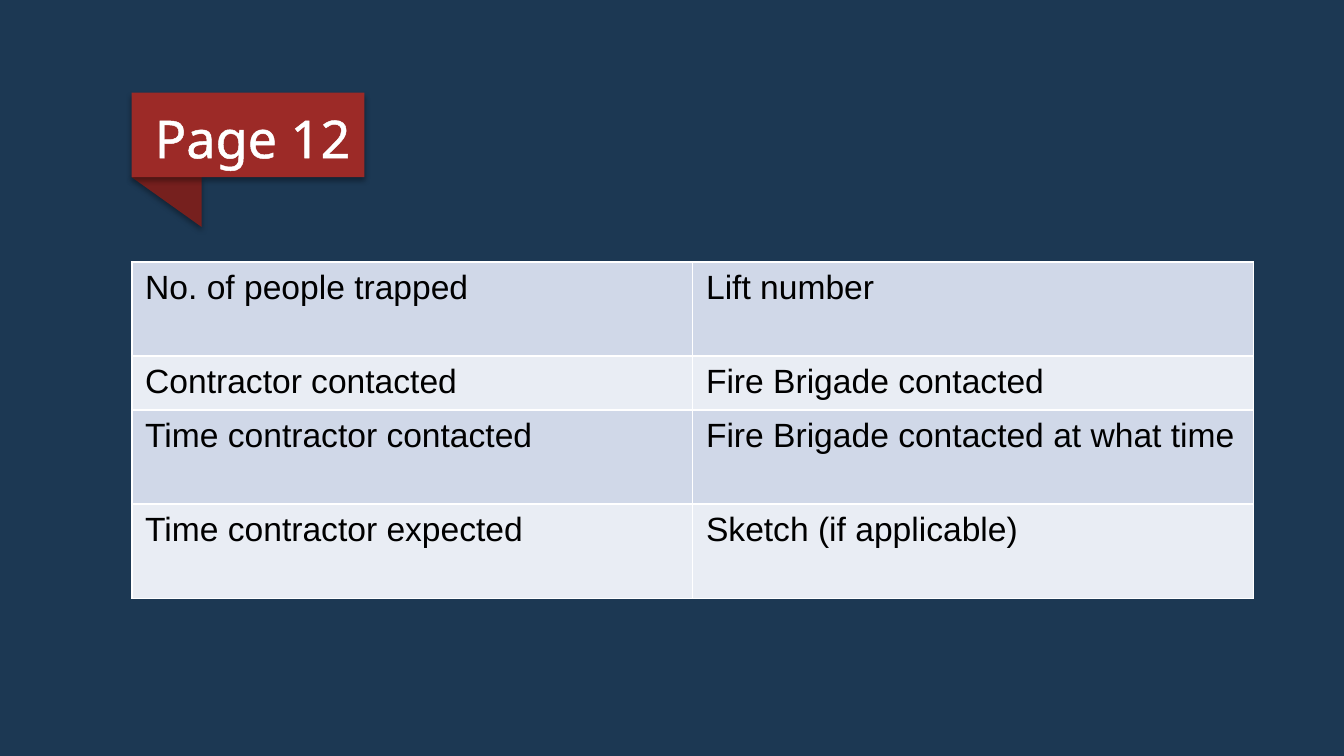
import pptx
import pptx.util
import pptx.dml.color
import pptx.enum.shapes
import pptx.enum.text
import pptx.oxml
from pptx.util import Cm, Pt
from pptx.enum.shapes import MSO_SHAPE

# Content
TITLE = "Page 12"
ROWS = [
    ("No. of people trapped", "Lift number"),
    ("Contractor contacted", "Fire Brigade contacted"),
    ("Time contractor contacted", "Fire Brigade contacted at what time"),
    ("Time contractor expected", "Sketch (if applicable)"),
]
ROW_HEIGHTS = [1.78, 1.02, 1.78, 1.78]
BANDS = ["D0D8E8", "E9EDF4"]
# Ribbon: shape, top, width, height, rotation, fill
RIBBON = [
    (MSO_SHAPE.RIGHT_TRIANGLE, 3.35, 1.32, 0.94, 180, "76201E"),
    (MSO_SHAPE.RECTANGLE, 1.75, 4.4, 1.6, 0, "9C2A27"),
]
LEFT, TABLE_TOP, TABLE_WIDTH = 2.49, 4.95, 21.2
NS = 'xmlns:a="http://schemas.openxmlformats.org/drawingml/2006/main"'


def paint(fill, color):
    fill.solid()
    fill.fore_color.rgb = pptx.dml.color.RGBColor.from_string(color)


def line_xml(tag):
    return pptx.oxml.parse_xml(
        f'<a:{tag} {NS} w="12700"><a:solidFill><a:srgbClr val="FFFFFF"/>'
        f'</a:solidFill></a:{tag}>')


def add_shadow(shape):
    shape._element.spPr.append(pptx.oxml.parse_xml(
        f'<a:effectLst {NS}><a:outerShdw blurRad="39370" dist="22860" dir="5400000" '
        'rotWithShape="0"><a:srgbClr val="000000"><a:alpha val="35000"/></a:srgbClr>'
        '</a:outerShdw></a:effectLst>'))


prs = pptx.Presentation()
prs.slide_width, prs.slide_height = Cm(25.4), Cm(14.29)
s = prs.slides.add_slide(prs.slide_layouts[5])
paint(s.background.fill, "1C3853")

# Ribbon behind the title
ribbon = s.shapes.add_group_shape()
for kind, top, width, height, rotation, color in RIBBON:
    sp = ribbon.shapes.add_shape(kind, Cm(LEFT), Cm(top), Cm(width), Cm(height))
    sp.rotation = rotation
    paint(sp.fill, color)
    sp.line.fill.background()
    add_shadow(sp)

# Title, raised above the ribbon
title = s.shapes.title
title.left, title.top, title.width, title.height = Cm(2.67), Cm(1.32), Cm(9.86), Cm(1.96)
ribbon._element.addnext(title._element)
tf = title.text_frame
tf.text = TITLE
tf.auto_size = pptx.enum.text.MSO_AUTO_SIZE.SHAPE_TO_FIT_TEXT
tf.vertical_anchor = pptx.enum.text.MSO_ANCHOR.MIDDLE
p = tf.paragraphs[0]
p.alignment = pptx.enum.text.PP_ALIGN.LEFT
p.line_spacing = 1.5
r = p.runs[0]
r.font.name, r.font.size = "Noto Sans", Pt(28)
paint(r.font.fill, "FFFFFF")
r._r.get_or_add_rPr().insert(0, line_xml("ln"))

# Table with banded rows and white borders
table = s.shapes.add_table(len(ROWS), 2, Cm(LEFT), Cm(TABLE_TOP),
                           Cm(TABLE_WIDTH), Cm(sum(ROW_HEIGHTS))).table
for i, (texts, height) in enumerate(zip(ROWS, ROW_HEIGHTS)):
    table.rows[i].height = Cm(height)
    for j, text in enumerate(texts):
        cell = table.cell(i, j)
        cell.text = text
        paint(cell.fill, BANDS[i % 2])
        font = cell.text_frame.paragraphs[0].font
        font.name, font.size, font.bold = "Arial", Pt(18), False
        paint(font.fill, "000000")
        for k, side in enumerate(("lnL", "lnR", "lnT", "lnB")):
            cell._tc.get_or_add_tcPr().insert(k, line_xml(side))

prs.save("out.pptx")
